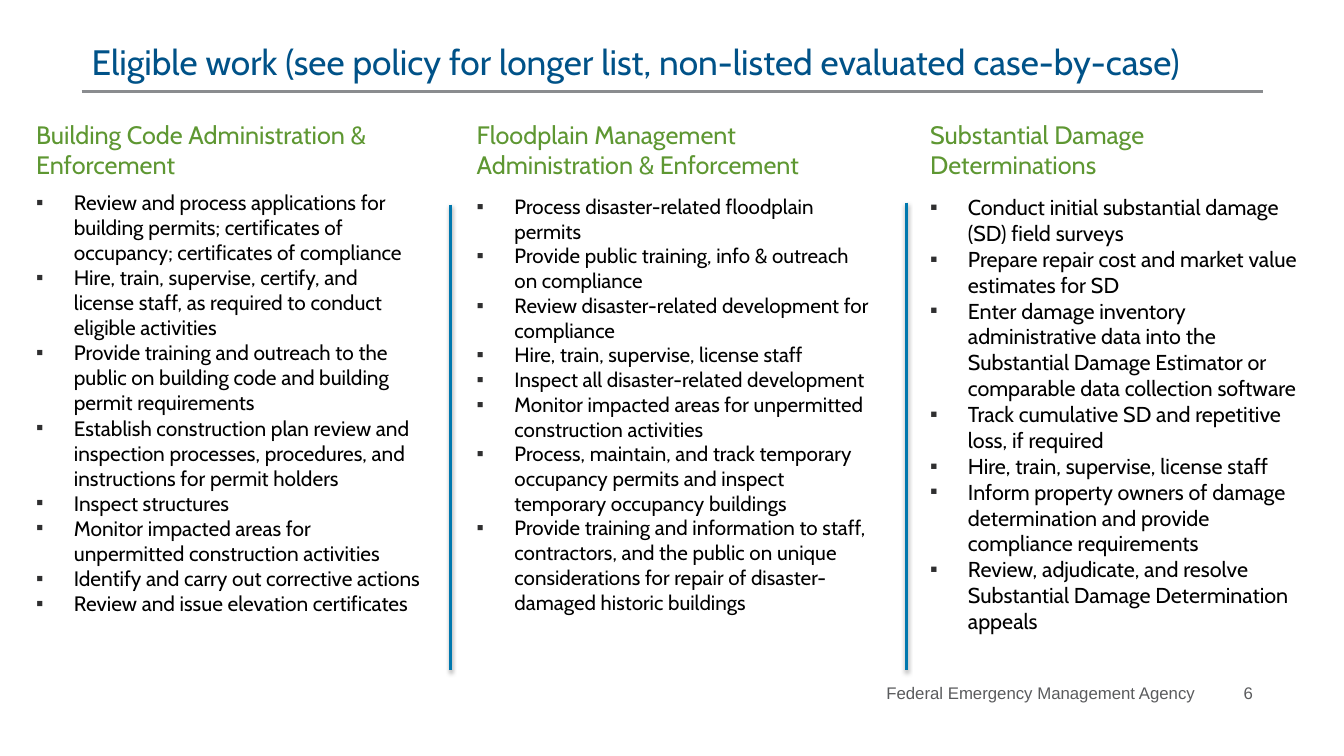
"""Build the eligible work slide with three columns of bulleted activities."""
import pptx
import pptx.dml.color
import pptx.enum.shapes
import pptx.enum.text
import pptx.oxml
import pptx.oxml.ns
import pptx.util

Pt = pptx.util.Pt
RGBColor = pptx.dml.color.RGBColor
ALIGN = pptx.enum.text.PP_ALIGN
ANCHOR = pptx.enum.text.MSO_ANCHOR

TITLE_BLUE = RGBColor(0x00, 0x52, 0x88)
DIVIDER_BLUE = RGBColor(0x00, 0x78, 0xAE)
GREEN = RGBColor(0x5E, 0x97, 0x32)
BLACK = RGBColor(0x00, 0x00, 0x00)
BULLET_GRAY = RGBColor(0x2F, 0x2F, 0x30)
RULE_GRAY = RGBColor(0x8A, 0x8C, 0x8F)
FOOTER_GRAY = RGBColor(0x5A, 0x5B, 0x5D)

COLUMNS = [
    {
        "heading": "Building Code Administration & Enforcement",
        "left": 18.72, "heading_width": 290.16,
        "top": 132, "width": 290.16, "height": 363.6, "size": 14.9,
        "items": [
            "Review and process applications for building permits; certificates of occupancy; certificates of compliance",
            "Hire, train, supervise, certify, and license staff, as required to conduct eligible activities",
            "Provide training and outreach to the public on building code and building permit requirements",
            "Establish construction plan review and inspection processes, procedures, and instructions for permit holders",
            "Inspect structures",
            "Monitor impacted areas for unpermitted construction activities",
            "Identify and carry out corrective actions",
            "Review and issue elevation certificates",
        ],
    },
    {
        "heading": "Floodplain Management Administration & Enforcement",
        "left": 333.36, "heading_width": 272.16,
        "top": 135, "width": 298.8, "height": 365, "size": 14.7,
        "items": [
            "Process disaster-related floodplain permits",
            "Provide public training, info & outreach on compliance",
            "Review disaster-related development for compliance",
            "Hire, train, supervise, license staff",
            "Inspect all disaster-related development",
            "Monitor impacted areas for unpermitted construction activities",
            "Process, maintain, and track temporary occupancy permits and inspect temporary occupancy buildings",
            "Provide training and information to staff, contractors, and the public on unique considerations for repair of disaster-damaged historic buildings",
        ],
    },
    {
        "heading": "Substantial Damage Determinations",
        "left": 657.36, "heading_width": 254.88,
        "top": 135, "width": 276.5, "height": 349.2, "size": 15.4,
        "items": [
            "Conduct initial substantial damage (SD) field surveys",
            "Prepare repair cost and market value estimates for SD",
            "Enter damage inventory administrative data into the Substantial Damage Estimator or comparable data collection software",
            "Track cumulative SD and repetitive loss, if required",
            "Hire, train, supervise, license staff",
            "Inform property owners of damage determination and provide compliance requirements",
            "Review, adjudicate, and resolve Substantial Damage Determination appeals",
        ],
    },
]


class SlideBuilder:
    """Hold the slide and its text style, and add each kind of element."""

    def __init__(self, slide, font_name):
        self.slide = slide
        self.font_name = font_name

    def add_xml(self, parent, content):
        """Append a drawing element given as XML text."""
        namespace = pptx.oxml.ns.nsdecls("a")
        tag, rest = content[:-1].split(" ", 1) if " " in content else (content[:-1], "")
        parent.append(pptx.oxml.parse_xml(f"{tag} {namespace} {rest}>"))

    def add_text(self, box, lines, size, color, font_name=None, anchor=ANCHOR.TOP,
                 alignment=ALIGN.LEFT, paragraph_xml=(), indent=0):
        """Add a text box with one paragraph for each line."""
        shape = self.slide.shapes.add_textbox(*map(Pt, box))
        frame = shape.text_frame
        frame.word_wrap = True
        frame.vertical_anchor = anchor
        for index, line in enumerate(lines):
            paragraph = frame.paragraphs[0] if index == 0 else frame.add_paragraph()
            paragraph.alignment = alignment
            properties = paragraph._p.get_or_add_pPr()
            if indent:
                properties.set("marL", str(Pt(indent)))
                properties.set("indent", str(-Pt(indent)))
            for content in paragraph_xml:
                properties.append(pptx.oxml.parse_xml(content))
            run = paragraph.add_run()
            run.text = line
            for name, value in {"name": font_name or self.font_name, "size": Pt(size)}.items():
                setattr(run.font, name, value)
            run.font.color.rgb = color

    def add_bullets(self, box, lines, size):
        """Add a list with square bullets."""
        namespace = pptx.oxml.ns.nsdecls("a")
        bullet = (
            f'<a:buClr {namespace}><a:srgbClr val="{BULLET_GRAY}"/></a:buClr>',
            f'<a:buFont {namespace} typeface="Arial"/>',
            f'<a:buChar {namespace} char="▪"/>',
        )
        self.add_text(box, lines, size, BLACK, paragraph_xml=bullet, indent=27)

    def add_line(self, start, end, color, shadow=""):
        """Add a straight line two points wide."""
        connector = self.slide.shapes.add_connector(
            pptx.enum.shapes.MSO_CONNECTOR.STRAIGHT, *map(Pt, (*start, *end)))
        connector.line.width = Pt(2)
        connector.line.color.rgb = color
        namespace = pptx.oxml.ns.nsdecls("a")
        connector._element.spPr.append(pptx.oxml.parse_xml(
            f"<a:effectLst {namespace}>{shadow}</a:effectLst>"))

    def add_divider(self, x, top):
        """Add a vertical column divider with a soft shadow."""
        shadow = (f'<a:outerShdw blurRad="{Pt(3.1)}" dist="{Pt(1.6)}" dir="5400000" '
                  'rotWithShape="0"><a:srgbClr val="000000"><a:alpha val="38000"/>'
                  '</a:srgbClr></a:outerShdw>')
        self.add_line((x, top), (x, 478.8), DIVIDER_BLUE, shadow)

    def add_footer(self, text):
        """Add the right-aligned footer with a tab before the page number."""
        namespace = pptx.oxml.ns.nsdecls("a")
        tab = (f'<a:tabLst {namespace}><a:tab pos="{Pt(252)}" algn="l"/></a:tabLst>',)
        self.add_text((589.68, 480.24, 312.48, 28.8), [text], 12, FOOTER_GRAY, "Arial",
                      ANCHOR.MIDDLE, ALIGN.RIGHT, tab)


def main():
    """Create the presentation and save it."""
    presentation = pptx.Presentation()
    presentation.slide_width = Pt(960)
    presentation.slide_height = Pt(540)
    slide = presentation.slides.add_slide(presentation.slide_layouts[6])
    builder = SlideBuilder(slide, "Cabin")

    builder.add_line((58.32, 65.5), (902.16, 65.5), RULE_GRAY)
    builder.add_footer("Federal Emergency Management Agency\t 6")
    builder.add_text(
        (58.32, 33.84, 843.84, 20.16),
        ["Eligible work (see policy for longer list, non-listed evaluated case-by-case)"],
        25.2, TITLE_BLUE, anchor=ANCHOR.MIDDLE)
    for column in COLUMNS:
        builder.add_text((column["left"], 81.36, column["heading_width"], 51.12),
                         [column["heading"]], 18, GREEN)
        box = [column[name] for name in ("left", "top", "width", "height")]
        builder.add_bullets(box, column["items"], column["size"])
    for x, top in ((322, 146.2), (647.5, 144.7)):
        builder.add_divider(x, top)
    presentation.save("out.pptx")


if __name__ == "__main__":
    main()
